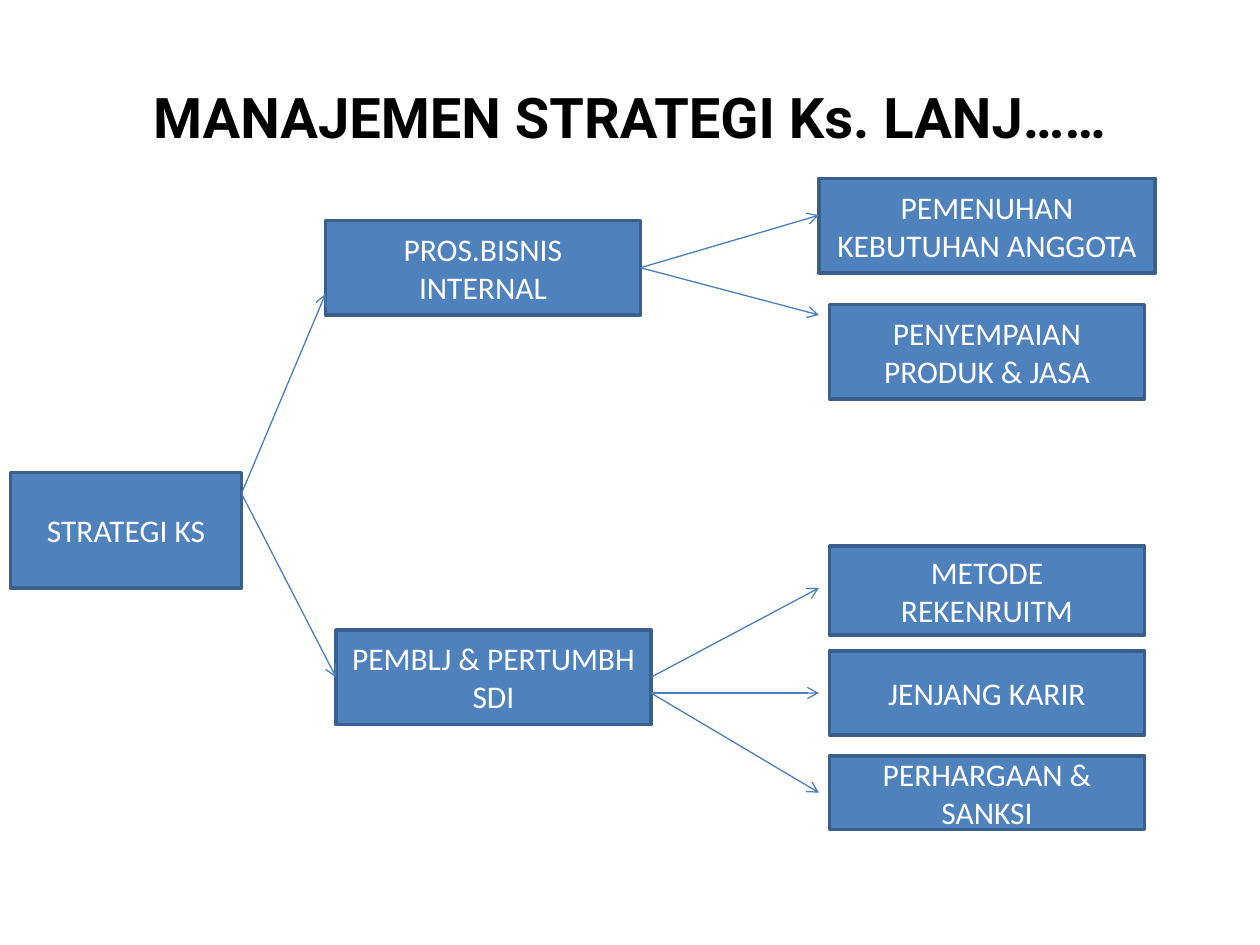
from lxml.etree import SubElement
from pptx import Presentation
from pptx.dml.color import RGBColor
from pptx.enum.shapes import MSO_CONNECTOR, MSO_SHAPE
from pptx.enum.text import MSO_ANCHOR, PP_ALIGN
from pptx.oxml.ns import qn
from pptx.util import Pt

TITLE = "MANAJEMEN STRATEGI Ks. LANJ……"
BOXES = [
    ("STRATEGI KS", 6, 270, 132, 66),
    ("PROS.BISNIS INTERNAL", 186, 126, 180, 54),
    ("PENYEMPAIAN PRODUK & JASA", 474, 174, 180, 54),
    ("PEMBLJ & PERTUMBH SDI", 192, 360, 180, 54),
    ("PEMENUHAN KEBUTUHAN ANGGOTA", 468, 102, 192, 54),
    ("METODE REKENRUITM", 474, 312, 180, 51),
    ("JENJANG KARIR", 474, 372, 180, 48),
    ("PERHARGAAN & SANKSI", 474, 432, 180, 42),
]
ARROWS = [
    ((366, 153), (468, 123)),
    ((366, 153), (468, 180)),
    ((372, 387), (468, 336)),
    ((372, 396), (468, 396)),
    ((372, 396), (468, 453)),
    ((138, 282), (186, 168)),
    ((138, 282), (192, 387)),
]
LEFT_SIDE, RIGHT_SIDE = 1, 3

BLACK = RGBColor(0x00, 0x00, 0x00)
WHITE = RGBColor(0xFF, 0xFF, 0xFF)
BOX_FILL = RGBColor(0x4F, 0x81, 0xBD)
BOX_BORDER = RGBColor(0x3A, 0x5F, 0x8C)
ARROW_BLUE = RGBColor(0x4B, 0x7E, 0xBC)


def write_centred(shape, text, font_name, size, color, bold=False):
    frame = shape.text_frame
    frame.word_wrap = True
    frame.vertical_anchor = MSO_ANCHOR.MIDDLE
    paragraph = frame.paragraphs[0]
    paragraph.text = text
    paragraph.alignment = PP_ALIGN.CENTER
    font = paragraph.font
    font.name, font.size, font.bold = font_name, Pt(size), bold
    font.color.rgb = color


def add_box(slide, text, left, top, width, height):
    box = slide.shapes.add_shape(
        MSO_SHAPE.RECTANGLE, Pt(left), Pt(top), Pt(width), Pt(height))
    box.shadow.inherit = False
    box.fill.solid()
    box.fill.fore_color.rgb = BOX_FILL
    box.line.color.rgb = BOX_BORDER
    box.line.width = Pt(2)
    write_centred(box, text, "Calibri", 18, WHITE)
    return box


def add_arrow(slide, start, end, side_middles):
    arrow = slide.shapes.add_connector(
        MSO_CONNECTOR.STRAIGHT, *(Pt(value) for value in start + end))
    arrow.line.color.rgb = ARROW_BLUE
    arrow.line.width = Pt(0.75)
    SubElement(arrow.line._get_or_add_ln(), qn("a:tailEnd"), type="arrow")
    SubElement(arrow._element.spPr, qn("a:effectLst"))
    if start in side_middles:
        arrow.begin_connect(*side_middles[start])
    if end in side_middles:
        arrow.end_connect(*side_middles[end])


def main():
    deck = Presentation()
    deck.slide_width, deck.slide_height = Pt(720), Pt(540)
    slide = deck.slides.add_slide(deck.slide_layouts[6])

    title = slide.shapes.add_textbox(Pt(36), Pt(21.6), Pt(648), Pt(90))
    write_centred(title, TITLE, "Roboto", 32, BLACK, bold=True)

    side_middles = {}
    for text, left, top, width, height in BOXES:
        box = add_box(slide, text, left, top, width, height)
        middle = top + height / 2
        side_middles[left, middle] = box, LEFT_SIDE
        side_middles[left + width, middle] = box, RIGHT_SIDE

    for start, end in ARROWS:
        add_arrow(slide, start, end, side_middles)

    deck.save("out.pptx")


if __name__ == "__main__":
    main()
